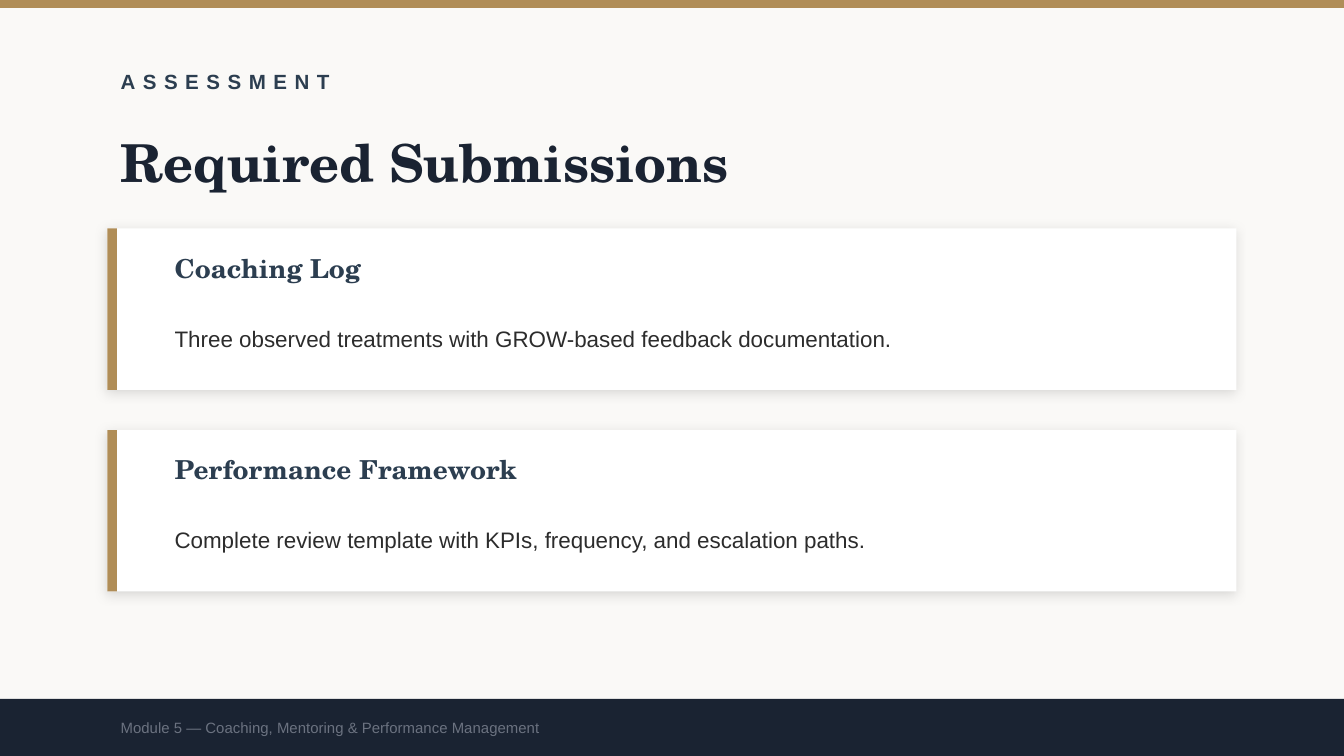
"""Build the required submissions slide."""
from pptx import Presentation
from pptx import util as u
from pptx.dml.color import RGBColor
from pptx.enum import shapes, text
from pptx.oxml.ns import qn
from lxml import etree

PAPER = RGBColor(0xFA, 0xF9, 0xF7)
GOLD = RGBColor(0xB0, 0x8D, 0x57)
NAVY = RGBColor(0x1A, 0x23, 0x32)
SLATE = RGBColor(0x2C, 0x3E, 0x50)
INK = RGBColor(0x2C, 0x2C, 0x2C)
GREY = RGBColor(0x6B, 0x72, 0x80)
WHITE = RGBColor(0xFF, 0xFF, 0xFF)
SANS, SERIF = "Arial", "TeX Gyre Schola"
WIDE, HIGH = 25.4, 14.29
LEFT = 2.03


class Deck:
    def __init__(self):
        self.file = Presentation()
        self.file.slide_width, self.file.slide_height = u.Cm(WIDE), u.Cm(HIGH)
        self.slide = self.file.slides.add_slide(self.file.slide_layouts[6])
        fill = self.slide.background.fill
        fill.solid()
        fill.fore_color.rgb = PAPER

    def block(self, x, y, w, h, color, raised=False):
        box = self.slide.shapes.add_shape(
            shapes.MSO_SHAPE.RECTANGLE, u.Cm(x), u.Cm(y), u.Cm(w), u.Cm(h))
        box.fill.solid()
        box.fill.fore_color.rgb = color
        box.line.fill.background()
        box.shadow.inherit = False
        if raised:
            effects = box._element.spPr.find(qn("a:effectLst"))
            shade = etree.SubElement(
                effects, qn("a:outerShdw"), blurRad=str(u.Pt(6)), dist=str(u.Pt(2)),
                dir=str(135 * 60000), algn="bl", rotWithShape="0")
            black = etree.SubElement(shade, qn("a:srgbClr"), val="000000")
            etree.SubElement(black, qn("a:alpha"), val="12000")

    def label(self, x, y, w, h, words, size, color, face=SANS, bold=False,
              track=0, lead=None):
        box = self.slide.shapes.add_textbox(u.Cm(x), u.Cm(y), u.Cm(w), u.Cm(h))
        frame = box.text_frame
        frame.word_wrap = True
        frame.vertical_anchor = text.MSO_ANCHOR.MIDDLE
        para = frame.paragraphs[0]
        if lead:
            para.line_spacing = lead
        run = para.add_run()
        run.text = words
        font = run.font
        font.name, font.size, font.bold = face, u.Pt(size), bold
        font.color.rgb = color
        if track:
            run._r.get_or_add_rPr().set("spc", str(track * 100))

    def card(self, y, title, body):
        self.block(LEFT, y, 21.34, 3.05, WHITE, raised=True)
        self.block(LEFT, y, 0.18, 3.05, GOLD)
        self.label(3.05, y + 0.3, 19.56, 0.89, title, 14, SLATE, SERIF, bold=True)
        self.label(3.05, y + 1.27, 19.56, 1.4, body, 12, INK, lead=1.4)


def main():
    deck = Deck()
    deck.block(0, 0, WIDE, 0.15, GOLD)
    deck.label(LEFT, 1.02, 20.32, 1.02, "ASSESSMENT", 11, SLATE, bold=True, track=4)
    deck.label(LEFT, 2.29, 20.32, 1.52, "Required Submissions", 28, NAVY, SERIF, bold=True)
    cards = [
        ("Coaching Log",
         "Three observed treatments with GROW-based feedback documentation."),
        ("Performance Framework",
         "Complete review template with KPIs, frequency, and escalation paths."),
    ]
    for i, (title, body) in enumerate(cards):
        deck.card(4.32 + 3.81 * i, title, body)
    deck.block(0, 13.21, WIDE, 1.08, NAVY)
    deck.label(LEFT, 13.21, 20.32, 1.08,
               "Module 5 — Coaching, Mentoring & Performance Management", 8, GREY)
    deck.file.save("out.pptx")


if __name__ == "__main__":
    main()
